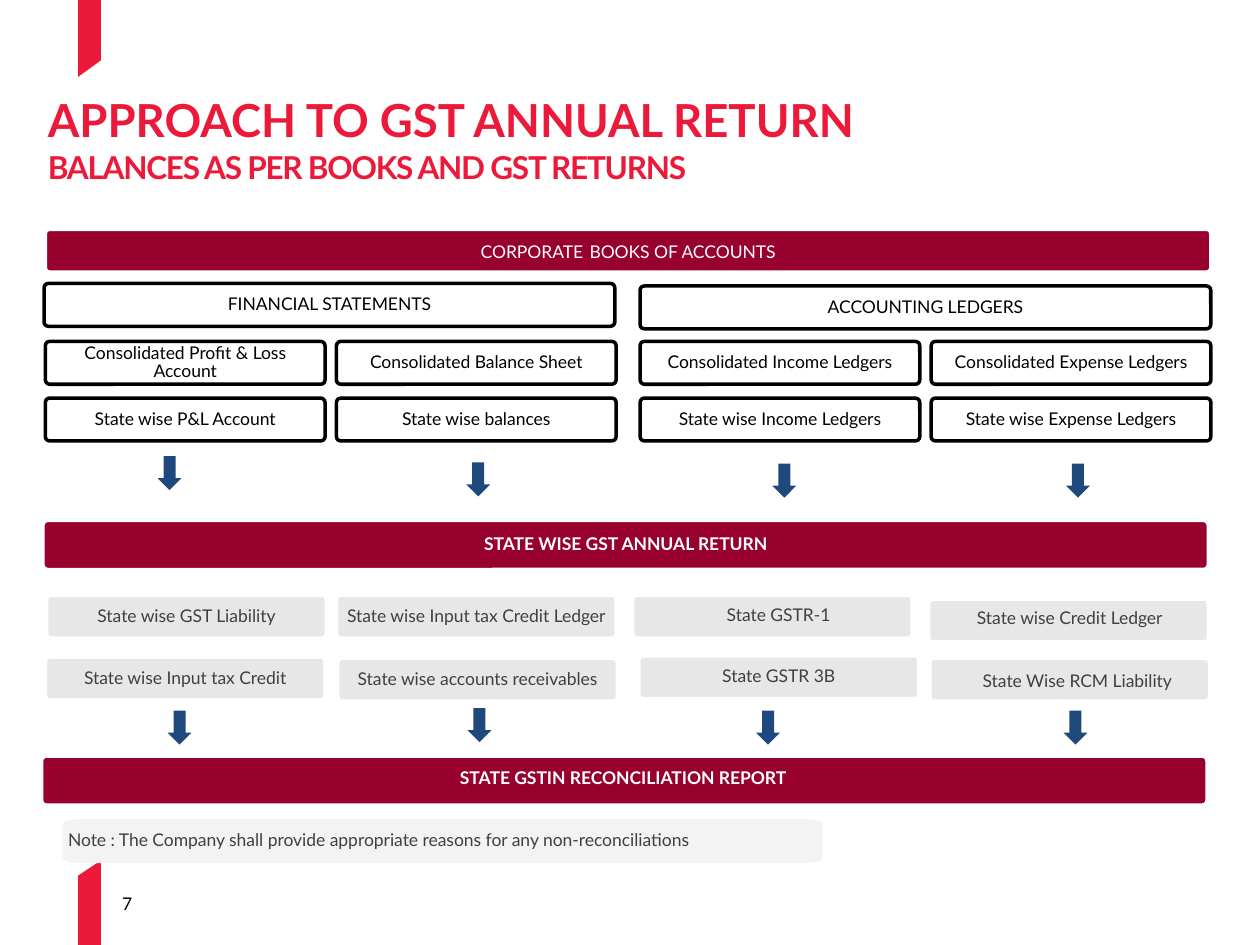
import dataclasses
import math
import typing

import lxml.etree
import pptx
import pptx.dml.color
import pptx.enum.shapes
import pptx.enum.text
import pptx.oxml.ns
import pptx.util

SHAPES = pptx.enum.shapes.MSO_SHAPE
ALIGN = pptx.enum.text.PP_ALIGN
ANCHOR = pptx.enum.text.MSO_ANCHOR
Inches = pptx.util.Inches

SLIDE_SIZE = (10, 7.5)
RED, BURGUNDY, NAVY = "EC1A3A", "98002E", "1F497D"
WHITE, BLACK, DARK_GREY, LIGHT_GREY, PALE = "FFFFFF", "000000", "404040", "E7E7E7", "F2F2F2"

GRID_LEFT, COLUMN_PITCH, COLUMN_GAP, HALF_GAP = 0.36, 2.31, 0.09, 0.1
GRID_TOP, ROW_PITCH = 1.81, 0.45
RIBBON_LEFT, RIBBON_RIGHT = 0.62, 0.8


@dataclasses.dataclass(frozen=True)
class Style:
    fill: typing.Optional[str]
    line: str
    ink: str
    height: float = 0.34
    bold: bool = False


@dataclasses.dataclass(frozen=True)
class Box:
    """A labelled box on the grid; nudges and label shifts are in inches."""
    label: str
    column: int
    row: float
    span: int = 1
    nudge: tuple = (0, 0)
    label_shift: tuple = (0, 0)


HEADER = Style(BURGUNDY, WHITE, WHITE)
BANNER = Style(BURGUNDY, WHITE, WHITE, height=0.39, bold=True)
OUTLINED = Style(None, BLACK, BLACK)
GREY = Style(LIGHT_GREY, WHITE, DARK_GREY)

BOXES = {
    HEADER: [Box("CORPORATE BOOKS OF ACCOUNTS", 0, 0, 4, (0, 0.01))],
    OUTLINED: [
        Box("FINANCIAL STATEMENTS", 0, 1, 2, (-0.01, -0.01)),
        Box("ACCOUNTING LEDGERS", 2, 1, 2, (0, 0.01)),
        Box("Consolidated Profit & Loss Account", 0, 2),
        Box("Consolidated Balance Sheet", 1, 2),
        Box("Consolidated Income Ledgers", 2, 2),
        Box("Consolidated Expense Ledgers", 3, 2),
        Box("State wise P&L Account", 0, 3),
        Box("State wise balances", 1, 3),
        Box("State wise Income Ledgers", 2, 3),
        Box("State wise Expense Ledgers", 3, 3),
    ],
    BANNER: [
        Box("STATE WISE GST ANNUAL RETURN", 0, 5, 4, (-0.02, 0.07)),
        Box("STATE GSTIN RECONCILIATION REPORT", 0, 9, 4, (-0.03, 0.14), (-0.01, -0.01)),
    ],
    GREY: [
        Box("State wise GST Liability", 0, 6.5, nudge=(0.01, -0.01)),
        Box("State wise Input tax Credit Ledger", 1, 6.5, nudge=(0, -0.01)),
        Box("State GSTR-1", 2, 6.5, nudge=(-0.06, -0.01), label_shift=(0.05, -0.01)),
        Box("State wise Credit Ledger", 3, 6.5, nudge=(-0.02, 0.02), label_shift=(0.01, -0.01)),
        Box("State wise Input tax Credit", 0, 7.5, nudge=(0, 0.03)),
        Box("State wise accounts receivables", 1, 7.5, nudge=(0.01, 0.04)),
        Box("State GSTR 3B", 2, 7.5, nudge=(-0.01, 0.02)),
        Box("State Wise RCM Liability", 3, 7.5, nudge=(-0.01, 0.04), label_shift=(0.06, 0.02)),
    ],
}

# Left and top of each arrow before its quarter turn
ARROWS = [(1.21, 3.66), (3.66, 3.71), (6.09, 3.72), (8.42, 3.72),
          (1.29, 5.68), (3.67, 5.66), (5.96, 5.68), (8.4, 5.68)]


def colour(hex_value: str) -> pptx.dml.color.RGBColor:
    return pptx.dml.color.RGBColor.from_string(hex_value)


def apply(target, formats: dict) -> None:
    for name, value in formats.items():
        setattr(target, name, value)


def paint(shape, fill: typing.Optional[str], line: typing.Optional[str] = None) -> None:
    shape.shadow.inherit = False
    if fill:
        shape.fill.solid()
        shape.fill.fore_color.rgb = colour(fill)
    else:
        shape.fill.background()
    if line:
        shape.line.color.rgb = colour(line)
        shape.line.width = pptx.util.Pt(2)
    else:
        shape.line.fill.background()


def set_up_frame(frame, insets: tuple, anchor) -> None:
    left, top, right, bottom = map(Inches, insets)
    apply(frame, dict(word_wrap=True, vertical_anchor=anchor, margin_left=left,
                      margin_top=top, margin_right=right, margin_bottom=bottom))


def add_run(paragraph, text: str, ink: str, size: float = 10, bold: bool = False,
            spacing: float = 0) -> None:
    """Add text; spacing between letters is in points."""
    run = paragraph.add_run()
    run.text = text
    if spacing:
        run._r.get_or_add_rPr().set("spc", str(round(spacing * 100)))
    apply(run.font, dict(name="Lato", size=pptx.util.Pt(size), bold=bold))
    run.font.color.rgb = colour(ink)


def draw_box(slide, box: Box, style: Style) -> None:
    left = GRID_LEFT + COLUMN_PITCH * box.column + HALF_GAP * (box.column // 2)
    width = COLUMN_PITCH * box.span - COLUMN_GAP + HALF_GAP * (box.span // 4)
    top = GRID_TOP + ROW_PITCH * box.row
    shape = slide.shapes.add_shape(
        SHAPES.ROUNDED_RECTANGLE, Inches(left + box.nudge[0]), Inches(top + box.nudge[1]),
        Inches(width), Inches(style.height))
    shape.adjustments[0] = 0.1
    paint(shape, style.fill, style.line)
    across, down = box.label_shift
    inset = 0.05
    set_up_frame(shape.text_frame,
                 (inset + across, inset + down, inset - across, inset - down), ANCHOR.MIDDLE)
    paragraph = shape.text_frame.paragraphs[0]
    apply(paragraph, dict(alignment=ALIGN.CENTER, line_spacing=0.9))
    if style is HEADER:
        first_word, rest = box.label.split(" ", 1)
        for text, size in ((first_word, 10), (" ", 14), (rest, 10)):
            add_run(paragraph, text, style.ink, size)
    else:
        add_run(paragraph, box.label, style.ink, bold=style.bold)


def draw_outline(slide, points: list, fill: str):
    start, *others = [(Inches(x), Inches(y)) for x, y in points]
    builder = slide.shapes.build_freeform(*start)
    builder.add_line_segments(others, close=True)
    shape = builder.convert_to_shape()
    paint(shape, fill)
    return shape


def draw_note(slide, text: str) -> None:
    left, top, right, bottom = 0.5, 6.5, 6.53, 6.85
    radius_x, radius_y, steps = 0.15, 0.04, 6
    corners = [(right - radius_x, bottom - radius_y), (left + radius_x, bottom - radius_y),
               (left + radius_x, top + radius_y), (right - radius_x, top + radius_y)]
    points = []
    for quarter, (x, y) in enumerate(corners):
        for step in range(steps + 1):
            angle = (quarter + step / steps) * math.pi / 2
            points.append((x + radius_x * math.cos(angle), y + radius_y * math.sin(angle)))
    note = draw_outline(slide, points, PALE)
    fill_colour = note._element.spPr.find(".//" + pptx.oxml.ns.qn("a:srgbClr"))
    lxml.etree.SubElement(fill_colour, pptx.oxml.ns.qn("a:alpha"), val="90000")
    set_up_frame(note.text_frame, (0.04,) * 4, ANCHOR.MIDDLE)
    paragraph = note.text_frame.paragraphs[0]
    apply(paragraph, dict(alignment=ALIGN.LEFT, line_spacing=0.9))
    add_run(paragraph, text, DARK_GREY)


def draw_text(slide, place: tuple, insets: tuple, lines: list) -> None:
    """Each line is a dict of add_run arguments."""
    frame = slide.shapes.add_textbox(*map(Inches, place)).text_frame
    set_up_frame(frame, insets, ANCHOR.TOP)
    for number, line in enumerate(lines):
        paragraph = frame.add_paragraph() if number else frame.paragraphs[0]
        if number:
            paragraph.space_before = pptx.util.Pt(1.1)
        add_run(paragraph, **line)


def main() -> None:
    deck = pptx.Presentation()
    deck.slide_width, deck.slide_height = map(Inches, SLIDE_SIZE)
    slide = deck.slides.add_slide(deck.slide_layouts[6])

    for edge, left_end, right_end in ((SLIDE_SIZE[1], 6.95, 6.83), (0, 0.61, 0.48)):
        draw_outline(slide, [(RIBBON_RIGHT, edge), (RIBBON_LEFT, edge),
                             (RIBBON_LEFT, left_end), (RIBBON_RIGHT, right_end)], RED)
    for style, boxes in BOXES.items():
        for box in boxes:
            draw_box(slide, box, style)
    for left, top in ARROWS:
        arrow = slide.shapes.add_shape(SHAPES.RIGHT_ARROW, *map(Inches, (left, top, 0.27, 0.19)))
        arrow.rotation = 90
        paint(arrow, NAVY)
    draw_note(slide, "Note : The Company shall provide appropriate reasons "
                     "for any non-reconciliations")
    draw_text(slide, (0.94, 7.09, 0.23, 0.17), (0.03, 0, 0, 0),
              [dict(text="7", ink=BLACK, spacing=-0.1)])
    draw_text(slide, (0.37, 0.71, 9.06, 0.94), (0.01, 0.02, 0, 0), [
        dict(text="APPROACH TO GST ANNUAL RETURN", ink=RED, size=26, bold=True),
        dict(text="BALANCES AS PER BOOKS AND GST RETURNS", ink=RED, size=18, bold=True,
             spacing=-0.7),
    ])
    deck.save("out.pptx")


if __name__ == "__main__":
    main()
